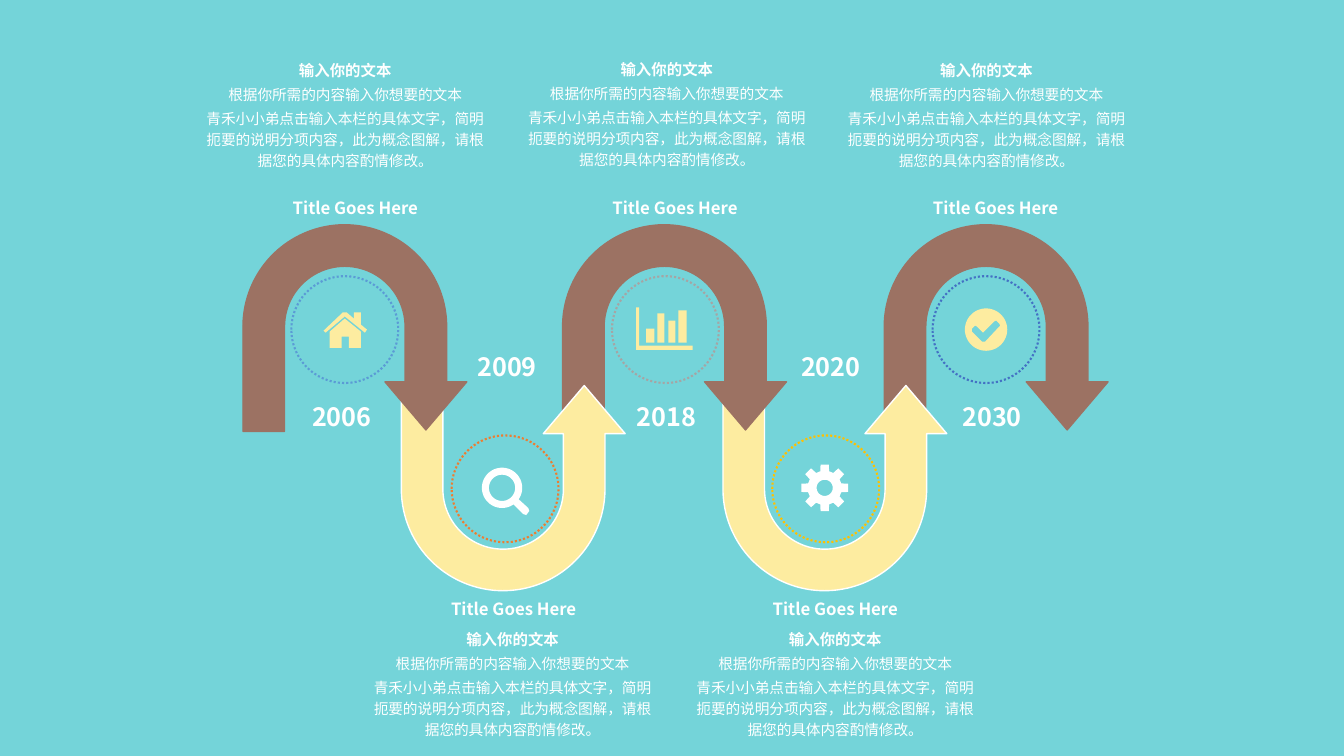
"""Build a five-stage winding timeline slide."""
from math import cos, radians, sin

from lxml import etree
from pptx import Presentation
from pptx.dml.color import RGBColor
from pptx.enum.dml import MSO_LINE
from pptx.enum.shapes import MSO_SHAPE
from pptx.enum.text import MSO_ANCHOR, MSO_AUTO_SIZE, PP_ALIGN
from pptx.oxml.ns import qn
from pptx.util import Pt

PX = 9144
FONT = "Noto Sans CJK SC"
BROWN, YELLOW, WHITE = "9C7263", "FDECA0", "FFFFFF"
UTURN, OVAL = MSO_SHAPE.U_TURN_ARROW, MSO_SHAPE.OVAL
CENTER, MIDDLE, TOP = PP_ALIGN.CENTER, MSO_ANCHOR.MIDDLE, MSO_ANCHOR.TOP
GROW, DOTTED = MSO_AUTO_SIZE.SHAPE_TO_FIT_TEXT, MSO_LINE.ROUND_DOT


def paint(shape, fill=None, line=None, width=1):
    """Give a shape its fill and line, with no shadow."""
    shape.shadow.inherit = False
    for part, color in ((shape.fill, fill), (shape.line.fill, line)):
        if color:
            part.solid()
            part.fore_color.rgb = RGBColor.from_string(color)
        else:
            part.background()
    if line:
        shape.line.width = Pt(width)


def add_text(box, lines, frame_format, paragraph_format):
    """Add a white centred text box; each line is (text, size, bold)."""
    frame = slide.shapes.add_textbox(*(value * PX for value in box)).text_frame
    for name, value in frame_format.items():
        setattr(frame, name, value)
    for index, (text, size, bold) in enumerate(lines):
        paragraph = frame.add_paragraph() if index else frame.paragraphs[0]
        paragraph.alignment = CENTER
        if index:
            for name, value in paragraph_format.items():
                setattr(paragraph, name, value)
        else:
            paragraph.line_spacing = paragraph_format.get("line_spacing")
        run = paragraph.add_run()
        run.text = text
        for name, value in {"size": Pt(size), "bold": bold, "name": FONT}.items():
            setattr(run.font, name, value)
        run.font.color.rgb = RGBColor.from_string(WHITE)
        etree.SubElement(run.font._element, qn("a:ea"), typeface=FONT)


presentation = Presentation()
presentation.slide_width, presentation.slide_height = 1333 * PX, 750 * PX
slide = presentation.slides.add_slide(presentation.slide_layouts[6])
slide.background.fill.solid()
slide.background.fill.fore_color.rgb = RGBColor.from_string("74D4D9")

# year, year left, ring colour, arrow left, title left, text left, text top
stages = [
    ("2006", 308, "5B9BD5", 241, 262, 192, 51),
    ("2009", 472, "ED7D31", 398, 419, 358, 615),
    ("2018", 630, "A5A5A5", 558, 579, 511, 50),
    ("2020", 793, "FFC000", 717, 738, 678, 615),
    ("2030", 953, "4472C4", 877, 897, 828, 51),
]
body_lines = [
    ("输入你的文本", 11, True),
    ("根据你所需的内容输入你想要的文本", 10.5, False),
    ("青禾小小弟点击输入本栏的具体文字，简明扼要的说明分项内容，"
     "此为概念图解，请根据您的具体内容酌情修改。", 10.5, False),
]
no_margins = dict.fromkeys(
    ("margin_left", "margin_top", "margin_right", "margin_bottom"), 0)
label_format = {**no_margins, "vertical_anchor": MIDDLE, "auto_size": GROW}
body_format = {
    "margin_left": 12 * PX, "margin_right": 12 * PX,
    "margin_top": 6 * PX, "margin_bottom": 6 * PX,
    "vertical_anchor": TOP, "auto_size": GROW, "word_wrap": True,
}

for index in reversed(range(len(stages))):
    lower = index % 2
    arrow = slide.shapes.add_shape(
        UTURN, stages[index][3] * PX, (381 if lower else 223) * PX, 222 * PX, 205 * PX)
    for position, value in enumerate((0.201, 0.198, 0.233, 0.493, 0.993)):
        arrow.adjustments[position] = value
    paint(arrow, YELLOW if lower else BROWN, WHITE if lower else BROWN)
    if lower:
        arrow.rotation = 180
        arrow.element.spPr.xfrm.set("flipH", "1")

for index, (year, year_left, ring_color, _, title_left, text_left, text_top) in enumerate(stages):
    lower = index % 2
    ring = slide.shapes.add_shape(
        OVAL, (289 + 159 * index) * PX, (432 if lower else 274) * PX, 106 * PX, 106 * PX)
    paint(ring, line=ring_color, width=1.5)
    ring.line.dash_style = DOTTED
    add_text((year_left, 349 if lower else 398, 62, 30), [(year, 18, True)],
             {**label_format, "word_wrap": False}, {})
    add_text((title_left, 594 if lower else 196, 181, 20), [("Title Goes Here", 12, True)],
             {**label_format, "word_wrap": True}, {})
    add_text((text_left, text_top, 301, 126), body_lines, body_format,
             {"line_spacing": 1.2, "space_before": Pt(2)})

house = [
    [(362, 330), (342, 314), (323, 330), (321, 328), (340, 310), (344, 310),
     (351, 316), (351, 310), (358, 310), (358, 322), (364, 327)],
    [(358, 345), (346, 345), (346, 334), (339, 334), (339, 345), (327, 345),
     (327, 329), (342, 316), (358, 329)],
]
bar_chart = [[(687, 347), (631, 347), (631, 305), (634, 305), (634, 343), (687, 343)]]
for left, right, top in ((641, 649, 326), (652, 659, 311), (663, 670, 318), (673, 681, 308)):
    bar_chart.append([(left, top), (right, top), (right, 340), (left, 340)])
lens_handle = [[(508, 499), (513, 494), (524, 504), (525, 507), (522, 511), (519, 510)]]
gear_teeth = [[
    (818 + radius * cos(radians(tooth + angle)), 484 + radius * sin(radians(tooth + angle)))
    for tooth in range(0, 360, 45)
    for radius, angle in ((17, -15), (23.5, -10), (23.5, 10), (17, 15))
]]
check_mark = [[(991, 321), (988, 318), (986, 319), (975, 330), (969, 324), (967, 323),
               (964, 326), (964, 329), (974, 339), (977, 339), (992, 323)]]
icons = [
    (YELLOW, [], house),
    (WHITE, [(498, 484, 20), (498, 484, 13)], []),
    (WHITE, [], lens_handle),
    (YELLOW, [], bar_chart),
    (WHITE, [(818, 484, 8)], gear_teeth),
    (YELLOW, [(978, 327, 21)], check_mark),
]
for color, circles, polygons in icons:
    rounds = [
        [(x + radius * cos(radians(angle)), y + radius * sin(radians(angle)))
         for angle in range(0, 360, 6)]
        for x, y, radius in circles
    ]
    first, *others = [[(x * PX, y * PX) for x, y in outline] for outline in rounds + polygons]
    builder = slide.shapes.build_freeform(*first[0])
    builder.add_line_segments(first[1:], close=True)
    for outline in others:
        builder.move_to(*outline[0])
        builder.add_line_segments(outline[1:], close=True)
    paint(builder.convert_to_shape(), color)

presentation.save("out.pptx")
